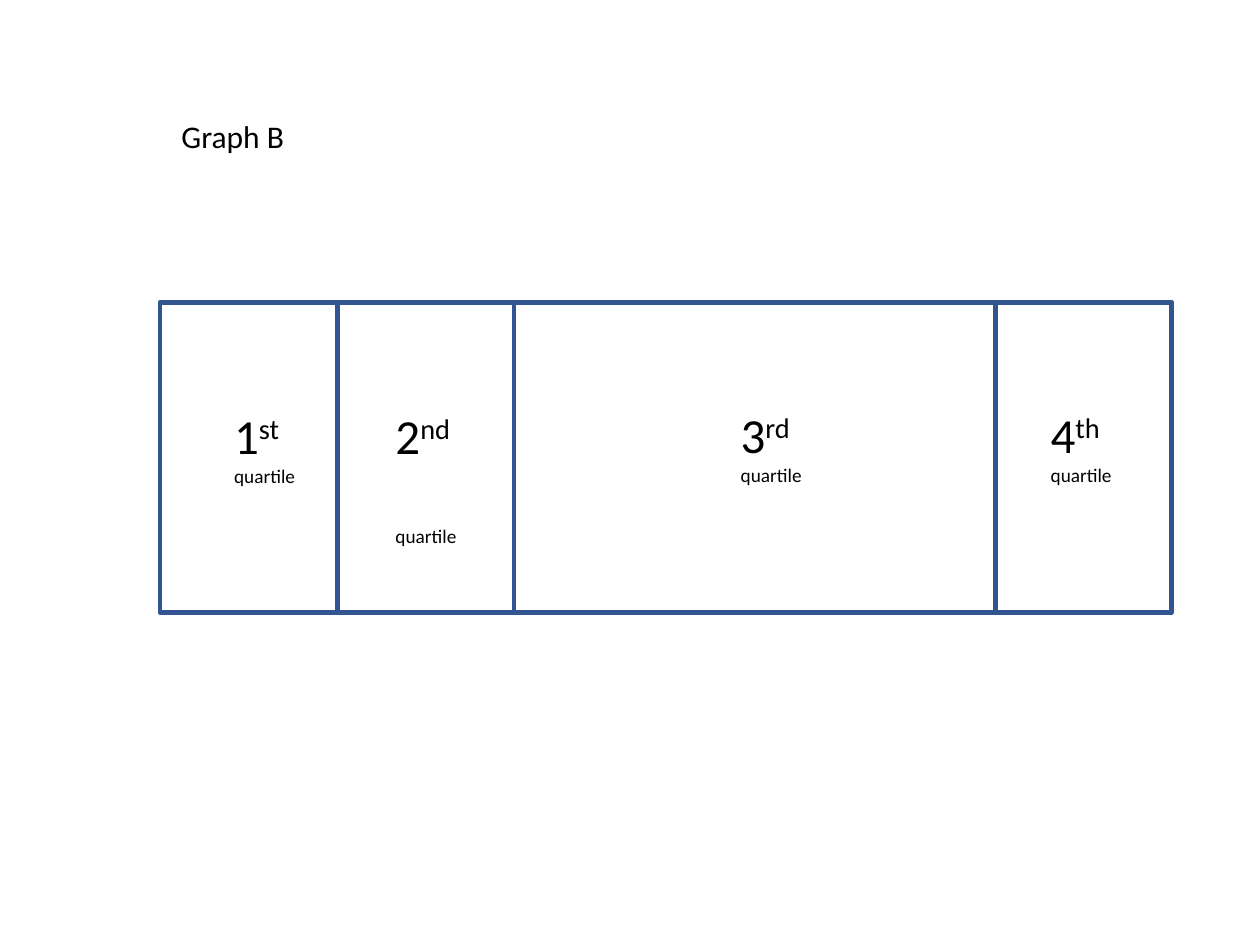
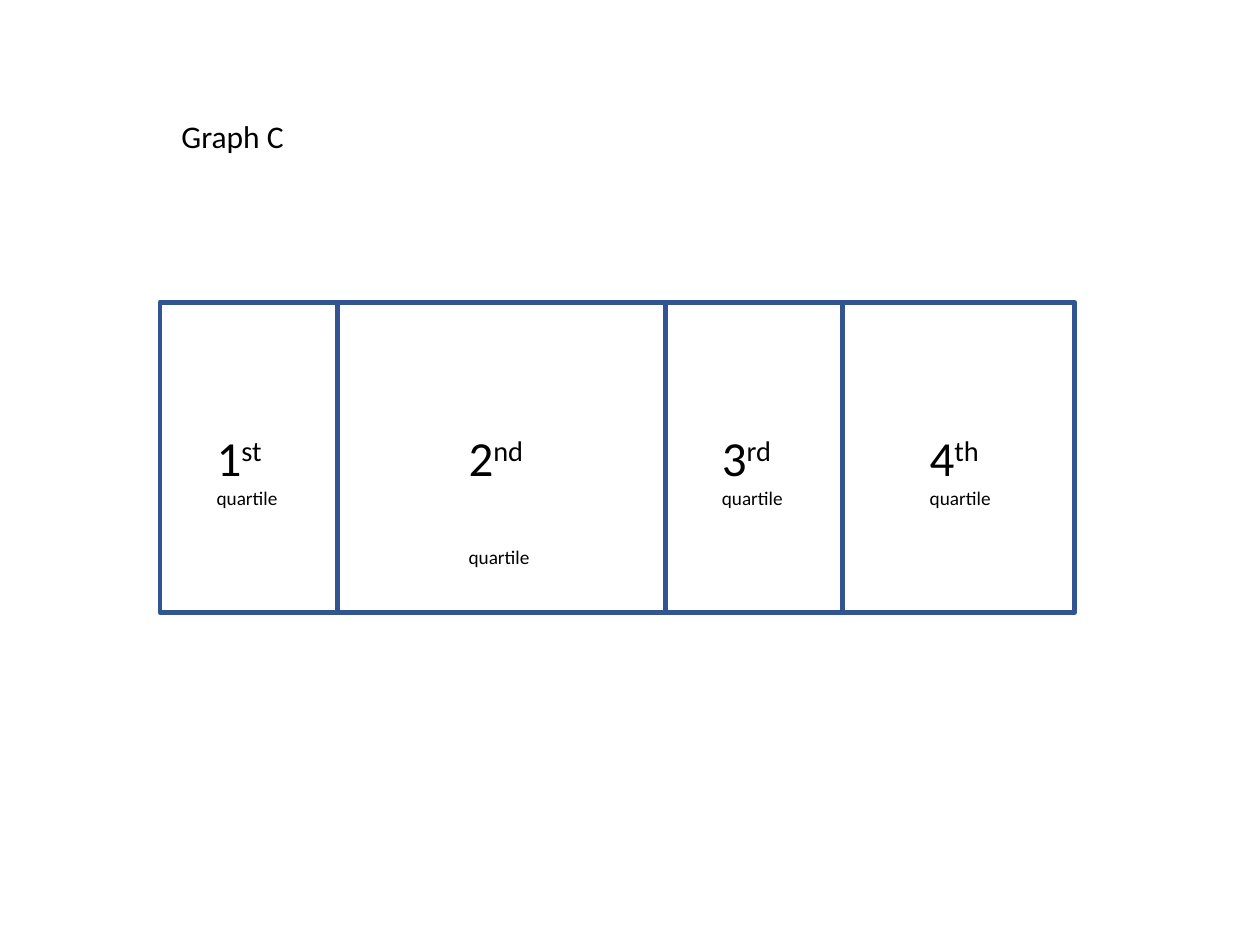
from pptx import Presentation
from pptx import util as u
from pptx.dml.color import RGBColor
from pptx.enum import shapes, text

COLOURS = {"outline": "325491", "text": "000000"}
FONT = "Calibri"

ORDINALS = [("1", "st"), ("2", "nd"), ("3", "rd"), ("4", "th")]
# Space in points above the word "quartile" under each ordinal
WORD_GAPS = [0, 34, 0, 0]

# Quartile widths, with the left and top of each label, in inches
GRAPHS = [
    {
        "title": "Graph B",
        "widths": [1.41, 1.4, 3.82, 1.4],
        "label_lefts": [1.76, 3.04, 5.78, 8.24],
        "label_tops": [3.17, 3.17, 3.16, 3.16],
    },
    {
        "title": "Graph C",
        "widths": [1.41, 2.6, 1.41, 1.84],
        "label_lefts": [1.62, 3.62, 5.63, 7.28],
        "label_tops": [3.34] * 4,
    },
]

PLOT_LEFT, PLOT_TOP, PLOT_HEIGHT = 1.27, 2.4, 2.46
LABEL_WIDTH, LABEL_HEIGHT = 0.71, 0.76
TITLE_AREA = (1.34, 0.88, 1.23, 0.4)


def colour(name):
    return RGBColor.from_string(COLOURS[name])


def add_span(para, words, size, raised=False):
    span = para.add_run()
    span.text = words
    span.font.name = FONT
    span.font.size = u.Pt(size)
    span.font.color.rgb = colour("text")
    if raised:
        span.font._element.set("baseline", "30000")


def prepare_frame(shape):
    frame = shape.text_frame
    frame.word_wrap = True
    frame.auto_size = text.MSO_AUTO_SIZE.NONE
    frame.vertical_anchor = text.MSO_ANCHOR.TOP
    frame.paragraphs[0].alignment = text.PP_ALIGN.LEFT
    return frame


def add_title(page, words):
    title = page.shapes.title
    title.left, title.top, title.width, title.height = map(u.Inches, TITLE_AREA)
    add_span(prepare_frame(title).paragraphs[0], words, 18)


def add_quartile(page, left, width):
    box = page.shapes.add_shape(
        shapes.MSO_SHAPE.RECTANGLE,
        *map(u.Inches, (left, PLOT_TOP, width, PLOT_HEIGHT)))
    box.shadow.inherit = False
    box.fill.background()
    box.line.color.rgb = colour("outline")
    box.line.width = u.Pt(2.75)


def add_label(page, left, top, ordinal, word_gap):
    label = page.shapes.add_textbox(
        *map(u.Inches, (left, top, LABEL_WIDTH, LABEL_HEIGHT)))
    frame = prepare_frame(label)
    number, suffix = ordinal
    add_span(frame.paragraphs[0], number, 28)
    add_span(frame.paragraphs[0], suffix, 28, raised=True)
    para = frame.add_paragraph()
    para.space_before = u.Pt(word_gap)
    add_span(para, "quartile", 11)


def add_graph(deck, graph):
    page = deck.slides.add_slide(deck.slide_layouts.get_by_name("Title Only"))
    add_title(page, graph["title"])

    # Quartiles stand side by side, each starting where the last one ends
    left = PLOT_LEFT
    for width in graph["widths"]:
        add_quartile(page, left, width)
        left += width

    # Labels lie over the quartiles
    for label in zip(graph["label_lefts"], graph["label_tops"], ORDINALS, WORD_GAPS):
        add_label(page, *label)


def main():
    deck = Presentation()
    deck.slide_width, deck.slide_height = u.Inches(10), u.Inches(7.5)
    for graph in GRAPHS:
        add_graph(deck, graph)
    deck.save("out.pptx")


if __name__ == "__main__":
    main()
